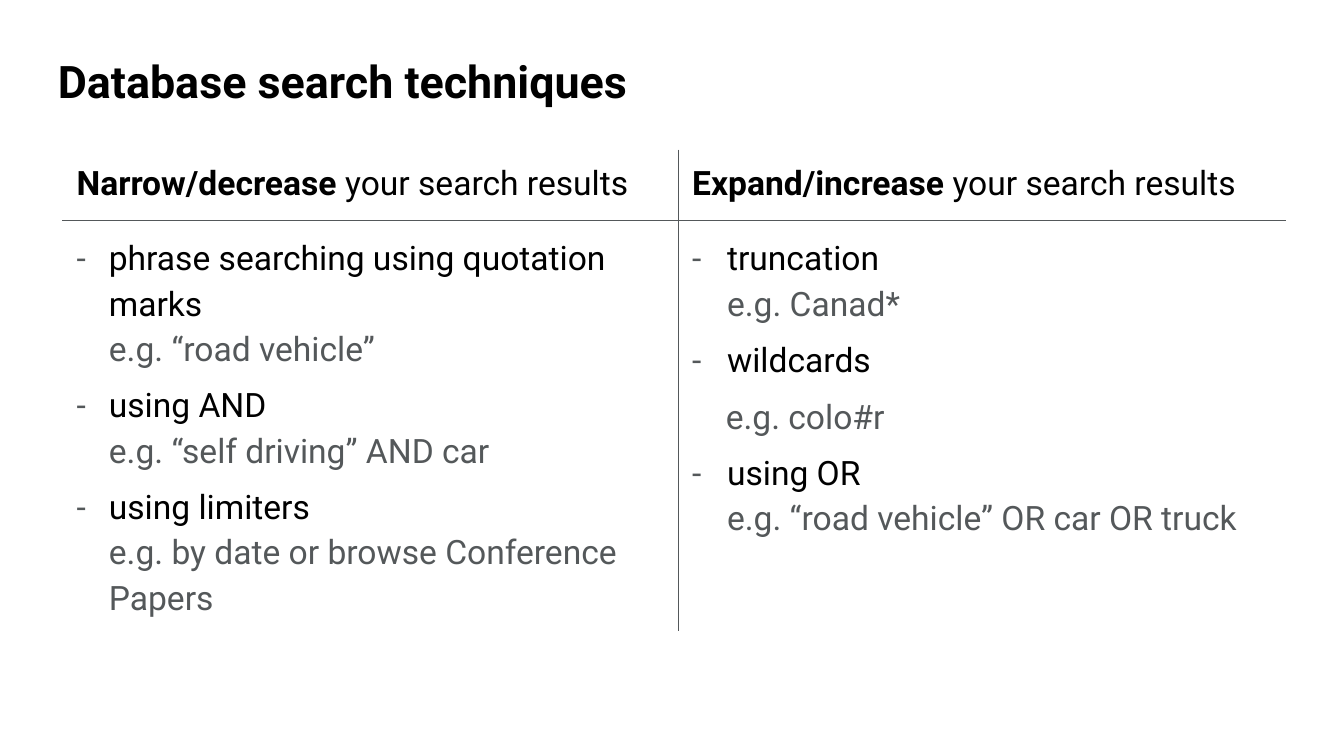
from lxml import etree
from pptx import Presentation
from pptx.dml.color import RGBColor
from pptx.enum.text import MSO_ANCHOR, MSO_AUTO_SIZE, PP_ALIGN
from pptx.oxml.ns import qn
from pptx.util import Inches, Pt

BLACK = RGBColor(0x00, 0x00, 0x00)
GREY = RGBColor(0x54, 0x58, 0x5A)
FONT = "Roboto"
INSET = Inches(0.1)

TECHNIQUES = [
    ("Narrow/decrease", 0.24, [
        ("phrase searching using quotation marks", "e.g. “road vehicle”"),
        ("using AND", "e.g. “self driving” AND car"),
        ("using limiters", "e.g. by date or browse Conference Papers"),
    ]),
    ("Expand/increase", 0.26, [
        ("truncation", "e.g. Canad*"),
        ("wildcards", None),
        (None, "e.g. colo#r"),
        ("using OR", "e.g. “road vehicle” OR car OR truck"),
    ]),
]


def add_run(paragraph, text, color, bold=False):
    run = paragraph.add_run()
    run.text = text
    run.font.bold = bold
    run.font.color.rgb = color


def set_font(paragraph, size):
    paragraph.font.name = FONT
    paragraph.font.size = Pt(size)


def add_color(parent, color):
    fill = etree.SubElement(parent, qn("a:solidFill"))
    etree.SubElement(fill, qn("a:srgbClr"), val=str(color))


def set_bullet(paragraph, indent, dash):
    properties = paragraph._p.get_or_add_pPr()
    properties.set("marL", str(Inches(indent)))
    properties.set("indent", str(-Inches(indent) if dash else 0))
    if dash:
        bullet_color = etree.SubElement(properties, qn("a:buClr"))
        etree.SubElement(bullet_color, qn("a:srgbClr"), val=str(GREY))
        etree.SubElement(properties, qn("a:buFont"), typeface=FONT)
        etree.SubElement(properties, qn("a:buChar"), char="-")
    else:
        etree.SubElement(properties, qn("a:buNone"))


def style_cell(cell, edges):
    cell.margin_left = cell.margin_right = INSET
    cell.margin_top = cell.margin_bottom = INSET
    cell.vertical_anchor = MSO_ANCHOR.TOP
    properties = cell._tc.get_or_add_tcPr()
    for edge in edges:
        line = etree.SubElement(properties, qn(f"a:ln{edge}"), w=str(Pt(0.75)))
        add_color(line, GREY)
    cell.fill.background()


def fill_heading(cell, effect):
    heading = cell.text_frame.paragraphs[0]
    set_font(heading, 18)
    add_run(heading, effect, BLACK, bold=True)
    add_run(heading, " your search results", BLACK)


def fill_techniques(cell, items, indent):
    frame = cell.text_frame
    for i, (technique, example) in enumerate(items):
        entry = frame.add_paragraph() if i else frame.paragraphs[0]
        entry.line_spacing = 1.15
        entry.space_before = Pt(6 if i else 0)
        set_bullet(entry, indent if technique else 0.25, dash=technique is not None)
        set_font(entry, 18)
        if technique:
            add_run(entry, technique, BLACK)
        if technique and example:
            entry.add_line_break()
        if example:
            add_run(entry, example, GREY)


def add_title(slide, left, top, width, height):
    title = slide.shapes.title
    title.left, title.top, title.width, title.height = left, top, width, height
    frame = title.text_frame
    frame.text = "Database search techniques"
    frame.word_wrap = True
    frame.auto_size = MSO_AUTO_SIZE.NONE
    frame.vertical_anchor = MSO_ANCHOR.BOTTOM
    frame.margin_left = frame.margin_right = INSET
    frame.margin_top = frame.margin_bottom = INSET
    heading = frame.paragraphs[0]
    heading.alignment = PP_ALIGN.LEFT
    set_font(heading, 24)
    heading.font.bold = True
    heading.font.color.rgb = BLACK


def add_comparison(slide, left, top, width, height):
    table = slide.shapes.add_table(2, 2, left, top, width, height).table
    table.first_row = False
    table.horz_banding = False
    table.columns[0].width = Inches(4.58)
    table.columns[1].width = width - Inches(4.58)
    table.rows[0].height = Inches(0.52)
    table.rows[1].height = height - Inches(0.52)
    for column, (effect, indent, items) in enumerate(TECHNIQUES):
        divider = "RL"[column]
        heading_cell, list_cell = table.cell(0, column), table.cell(1, column)
        style_cell(heading_cell, [divider, "B"])
        style_cell(list_cell, [divider, "T"])
        fill_heading(heading_cell, effect)
        fill_techniques(list_cell, items, indent)


def main():
    deck = Presentation()
    deck.slide_width = Inches(10)
    deck.slide_height = deck.slide_width * 9 // 16
    slide = deck.slides.add_slide(deck.slide_layouts[5])
    add_title(slide, Inches(0.33), Inches(0.31), Inches(9.37), Inches(0.59))
    add_comparison(slide, Inches(0.47), Inches(1.12), Inches(9.09), Inches(3.58))
    deck.save("out.pptx")


if __name__ == "__main__":
    main()
